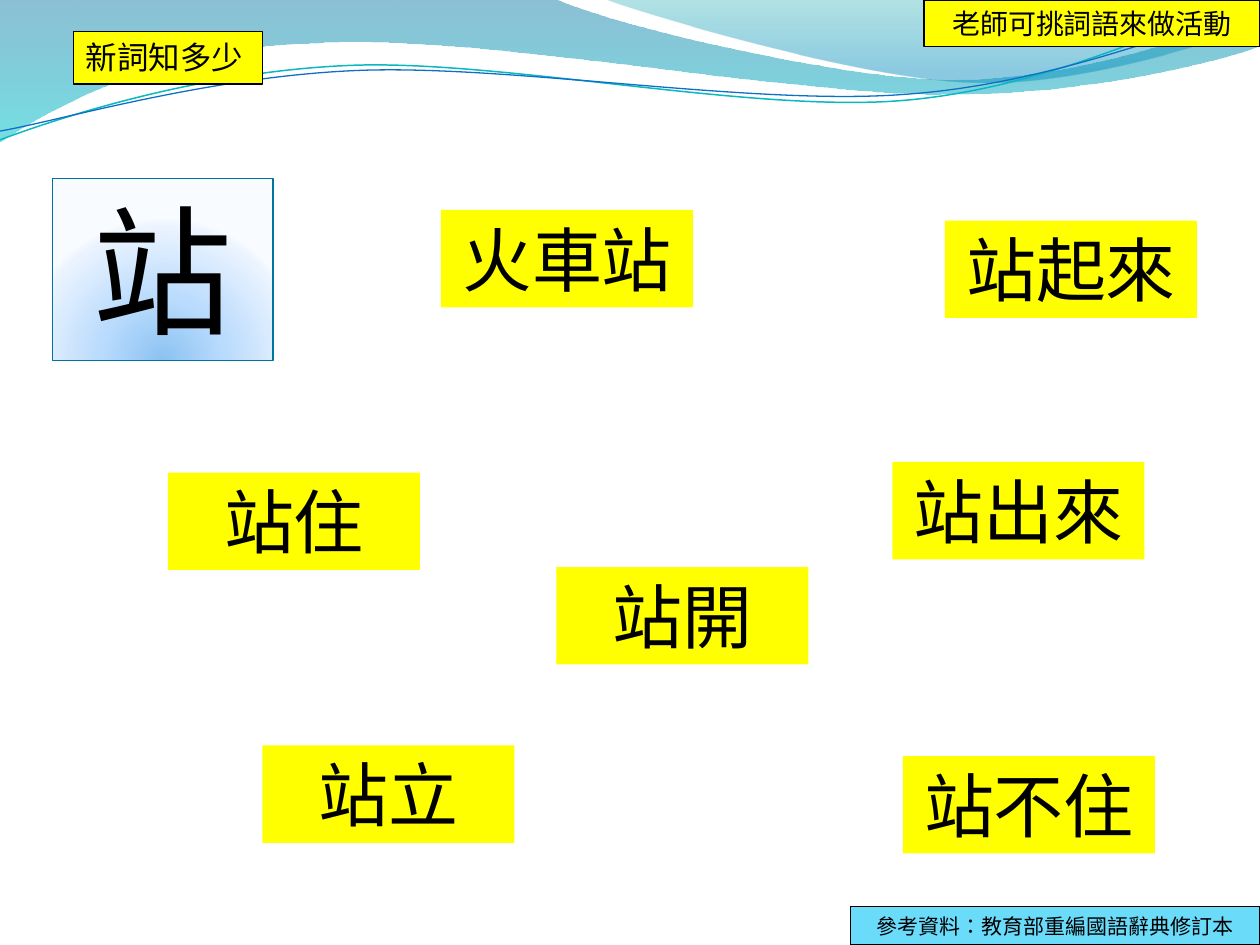
import math
from dataclasses import dataclass
from typing import Optional

import lxml.etree
import pptx
import pptx.dml.color
import pptx.enum.shapes
import pptx.enum.text
import pptx.oxml
import pptx.oxml.ns
import pptx.util

FONT = "Noto Sans CJK SC"
COLOURS = {
    "yellow": "FFFF00", "sky": "6BDBFA", "black": "000000", "teal": "0074A1",
    "aqua": "00C6CF", "green": "00A1A9", "blue": "008BBF",
    "turquoise line": "0AB8BF", "blue line": "0F6FC6",
    "glow 1": "8BC2F1", "glow 2": "B9DBFD", "glow 3": "EAF3FE", "glow 4": "F8FBFF",
}
CENTRE = pptx.enum.text.PP_ALIGN.CENTER
LEFT = pptx.enum.text.PP_ALIGN.LEFT
DOWNWARD = '<a:lin ang="5400000" scaled="0"/>'
FROM_BELOW = ('<a:path path="circle"><a:fillToRect l="50000" t="130000" '
              'r="50000" b="-30000"/></a:path>')

Point = tuple[float, float]


@dataclass(frozen=True)
class Stop:
    position: int
    colour: str
    opacity: int = 100


@dataclass(frozen=True)
class Wave:
    start: Point
    segments: tuple[tuple[Point, ...], ...]
    stops: tuple[Stop, ...] = ()
    line: Optional[str] = None
    line_width: float = 0.75
    rotation: float = 0
    centre: Point = (0, 0)


@dataclass(frozen=True)
class Card:
    text: str
    left: float
    top: float
    width: float = 144
    height: float = 55.7
    size: float = 40
    fill: Optional[str] = "yellow"
    line: Optional[str] = None
    alignment: pptx.enum.text.PP_ALIGN = CENTRE


WAVES = (
    Wave((0, 0), (
        ((317, -0.7),),
        ((342.7, 12.2), (478, 45.4), (545.8, 45.4)),
        ((614.2, 45.4), (689.8, 18.7), (720, 6.5)),
        ((720.7, 25.9),),
        ((707.8, 31.7), (626.4, 54.7), (537.1, 54)),
        ((447.8, 54), (275, 20.2), (185, 24.5)),
        ((92.9, 25.9), (33.1, 59.8), (-0.7, 81.4)),
    ), stops=(Stop(0, "teal", 45), Stop(100, "aqua", 55))),
    Wave((344.9, -0.7), (
        ((366.5, 7.9), (491, 44.6), (553.7, 46.8)),
        ((616.3, 49.7), (691.9, 23), (720, 15.1)),
        ((720, 0),),
    ), stops=(Stop(0, "green", 30), Stop(80, "blue", 45))),
    Wave((0, 79.9), (
        ((34.6, 67), (113.8, 41), (199.4, 37.4)),
        ((284.4, 33.8), (427, 64.1), (513.4, 57.6)),
        ((599.8, 51.1), (675.4, 10.8), (718.6, -1.4)),
    ), line="turquoise line", line_width=0.85, rotation=357.3, centre=(359.3, 41.4)),
    Wave((0, 74.9), (
        ((33.8, 69.1), (118.1, 43.9), (203.8, 40.3)),
        ((290.2, 36.7), (429.8, 60.5), (516.2, 54)),
        ((601.9, 48.2), (677.5, 15.1), (720, 4.3)),
    ), line="blue line", rotation=357.3, centre=(359.6, 42.5)),
)

WORDS = (
    Card("站開", 318, 324),
    Card("站住", 96, 270),
    Card("站出來", 510, 264),
    Card("站立", 150, 426),
    Card("站不住", 516, 432),
    Card("火車站", 252, 120),
)
CHARACTER = Card("站", 30, 102, 126, 104.2, 80, None, "teal")
LABELS = (
    Card("站起來", 540, 126),
    Card("新詞知多少", 42, 18, 108, 30, 18, line="black", alignment=LEFT),
    Card("參考資料：教育部重編國語辭典修訂本", 486, 518.2, 234, 21.8, 12, "sky", "black"),
    Card("老師可挑詞語來做活動", 528, 0, 192, 26.6, 16, line="black"),
)
GLOW = (Stop(0, "glow 1"), Stop(43, "glow 2"), Stop(93, "glow 3"), Stop(100, "glow 4"))


def rgb(name: str) -> pptx.dml.color.RGBColor:
    """Return the named colour."""
    return pptx.dml.color.RGBColor.from_string(COLOURS[name])


def stop_xml(stop: Stop) -> str:
    """Return a gradient stop element."""
    return (f'<a:gs pos="{stop.position * 1000}"><a:srgbClr val="{COLOURS[stop.colour]}">'
            f'<a:alpha val="{stop.opacity * 1000}"/></a:srgbClr></a:gs>')


def set_gradient(shape, stops: tuple[Stop, ...], direction: str) -> None:
    """Fill a shape with a gradient."""
    shape.fill.background()
    empty_fill = shape._element.spPr.find(pptx.oxml.ns.qn("a:noFill"))
    gradient = pptx.oxml.parse_xml(
        f'<a:gradFill {pptx.oxml.ns.nsdecls("a")} rotWithShape="1">'
        f'<a:gsLst>{"".join(map(stop_xml, stops))}</a:gsLst>{direction}</a:gradFill>')
    empty_fill.getparent().replace(empty_fill, gradient)


def set_line(shape, colour: Optional[str], width: float = 0.75) -> None:
    """Outline a shape, or remove its outline."""
    if colour is None:
        shape.line.fill.background()
    else:
        shape.line.color.rgb = rgb(colour)
        shape.line.width = pptx.util.Pt(width)


def turn_back(point: Point, wave: Wave) -> Point:
    """Return a point as it lies before the wave is rotated."""
    angle = math.radians(-wave.rotation)
    x, y = point[0] - wave.centre[0], point[1] - wave.centre[1]
    return (wave.centre[0] + x * math.cos(angle) - y * math.sin(angle),
            wave.centre[1] + x * math.sin(angle) + y * math.cos(angle))


def bend_segments(shape, segments: tuple[tuple[Point, ...], ...]) -> None:
    """Join each group of three straight steps into one cubic curve."""
    steps = iter(list(shape._element.iter(pptx.oxml.ns.qn("a:lnTo"))))
    for segment in segments:
        group = [next(steps) for _ in segment]
        if len(group) == 3:
            curve = lxml.etree.Element(pptx.oxml.ns.qn("a:cubicBezTo"))
            group[0].addprevious(curve)
            for step in group:
                curve.append(step[0])
                step.getparent().remove(step)


def add_wave(slide, wave: Wave) -> None:
    """Draw a filled wave or a wavy line."""
    points = [wave.start, *(point for segment in wave.segments for point in segment)]
    vertices = [tuple(map(pptx.util.Pt, turn_back(point, wave))) for point in points]
    builder = slide.shapes.build_freeform(*vertices[0])
    builder.add_line_segments(vertices[1:], close=bool(wave.stops))
    shape = builder.convert_to_shape()
    bend_segments(shape, wave.segments)
    shape.rotation = wave.rotation
    shape.shadow.inherit = False
    if wave.stops:
        set_gradient(shape, wave.stops, DOWNWARD)
    else:
        shape.fill.background()
    set_line(shape, wave.line, wave.line_width)


def add_card(slide, card: Card):
    """Draw a rectangle with one line of text."""
    shape = slide.shapes.add_shape(
        pptx.enum.shapes.MSO_SHAPE.RECTANGLE,
        *map(pptx.util.Pt, (card.left, card.top, card.width, card.height)))
    shape.shadow.inherit = False
    if card.fill:
        shape.fill.solid()
        shape.fill.fore_color.rgb = rgb(card.fill)
    set_line(shape, card.line)
    frame = shape.text_frame
    frame.word_wrap = True
    frame.auto_size = pptx.enum.text.MSO_AUTO_SIZE.SHAPE_TO_FIT_TEXT
    frame.vertical_anchor = pptx.enum.text.MSO_ANCHOR.TOP
    paragraph = frame.paragraphs[0]
    paragraph.alignment = card.alignment
    run = paragraph.add_run()
    run.text = card.text
    run.font.size = pptx.util.Pt(card.size)
    run.font.name = FONT
    run.font.language_id = pptx.enum.lang.MSO_LANGUAGE_ID.TRADITIONAL_CHINESE
    run.font.color.rgb = rgb("black")
    east_asian = lxml.etree.SubElement(run._r.get_or_add_rPr(), pptx.oxml.ns.qn("a:ea"))
    east_asian.set("typeface", FONT)
    return shape


def main() -> None:
    """Build the vocabulary slide."""
    presentation = pptx.Presentation()
    presentation.slide_width = pptx.util.Pt(720)
    presentation.slide_height = pptx.util.Pt(540)
    slide = presentation.slides.add_slide(presentation.slide_layouts[6])
    for wave in WAVES:
        add_wave(slide, wave)
    for word in WORDS:
        add_card(slide, word)
    set_gradient(add_card(slide, CHARACTER), GLOW, FROM_BELOW)
    for label in LABELS:
        add_card(slide, label)
    presentation.save("out.pptx")


if __name__ == "__main__":
    import pptx.enum.lang
    main()
